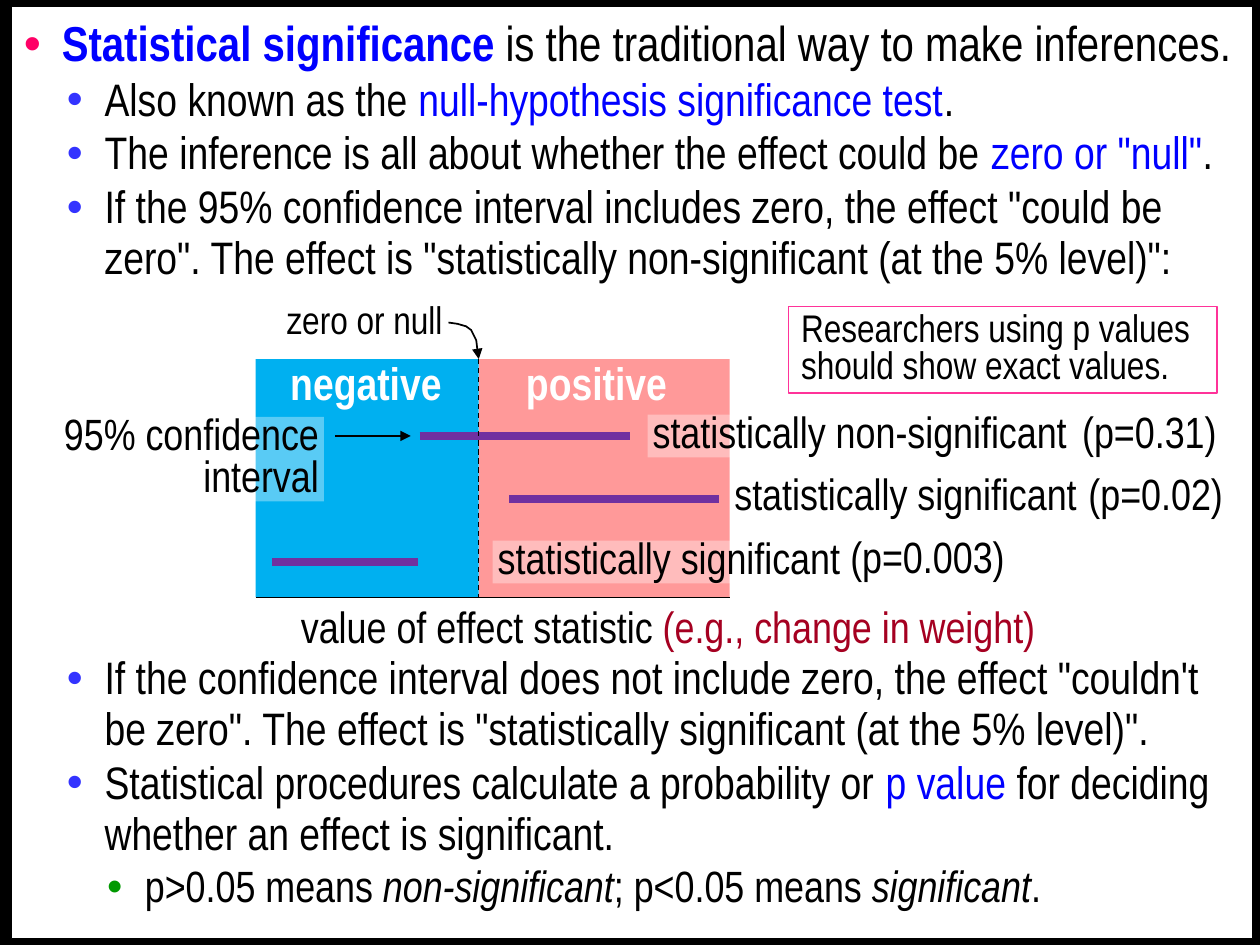
from dataclasses import dataclass

from lxml.etree import SubElement
from pptx import Presentation
from pptx.dml.color import RGBColor
from pptx.enum.dml import MSO_LINE
from pptx.enum.shapes import MSO_CONNECTOR, MSO_SHAPE
from pptx.enum.text import MSO_ANCHOR, MSO_AUTO_SIZE, PP_ALIGN
from pptx.oxml.ns import qn
from pptx.util import Inches, Pt

FONT = "Arial Narrow"
BLACK, WHITE, BLUE, PURPLE = "000000", "FFFFFF", "0000FF", "7030A0"
ZERO, TOP, BOTTOM, LEFT, RIGHT = 3.8, 2.85, 4.74, 2.03, 5.79


@dataclass
class Span:
    text: str
    color: str = BLACK
    bold: bool = False
    italic: bool = False


@dataclass
class Bullet:
    level: int
    spans: list[Span]
    space_before: float = 1.3


@dataclass
class Label:
    box: tuple[float, float, float, float]
    spans: list[Span]
    size: float = 25
    align: PP_ALIGN = PP_ALIGN.LEFT
    anchor: MSO_ANCHOR = MSO_ANCHOR.MIDDLE
    insets: tuple[float, float] = (0.1, 0.05)
    wrap: bool = False
    veil: bool = False
    outline: str = ""
    shadow: bool = False


@dataclass
class Line:
    start: tuple[float, float]
    end: tuple[float, float]
    color: str = BLACK
    width: float = 0.75
    dashed: bool = False
    arrow: bool = False


LEVELS = [(0.3, 28, "FF0066"), (0.64, 26, "3333FF"), (0.96, 25, "009900")]

BULLETS = [
    Bullet(0, [Span("Statistical significance ", BLUE, bold=True),
               Span("is the traditional way to make inferences.")]),
    Bullet(1, [Span("Also known as the "), Span("null-hypothesis significance test", BLUE), Span(".")]),
    Bullet(1, [Span("The inference is all about whether the effect could be "),
               Span('zero or "null"', BLUE), Span(".")]),
    Bullet(1, [Span('If the 95% confidence interval includes zero, the effect "could be zero". '
                    'The effect is "statistically non-significant (at the 5% level)":')]),
    Bullet(1, [Span('If the confidence interval does not include zero, the effect "couldn\'t be zero". '
                    'The effect is "statistically significant (at the 5% level)".')], space_before=210.5),
    Bullet(1, [Span("Statistical procedures calculate a probability or "), Span("p value", BLUE),
               Span(" for deciding whether an effect is significant.")]),
    Bullet(2, [Span("p>0.05 means "), Span("non-significant", italic=True),
               Span("; p<0.05 means "), Span("significant", italic=True), Span(".")]),
]

HEADING = dict(size=26, align=PP_ALIGN.CENTER, anchor=MSO_ANCHOR.TOP, insets=(0.02, 0), shadow=True)
VEILED = dict(insets=(0.04, 0), veil=True)

LABELS = [
    Label((4.15, 2.9, 1.17, 0.35), [Span("positive", WHITE, bold=True)], **HEADING),
    Label((2.28, 2.9, 1.25, 0.35), [Span("negative", WHITE, bold=True)], **HEADING),
    Label((0.35, 3.31, 2.22, 0.67), [Span("95% confidence interval")],
          align=PP_ALIGN.RIGHT, wrap=True, **VEILED),
    Label((5.14, 3.29, 3.4, 0.34), [Span("statistically non-significant")], **VEILED),
    Label((5.73, 3.73, 2.95, 0.44), [Span("statistically significant")]),
    Label((3.91, 4.29, 2.82, 0.34), [Span("statistically significant")], **VEILED),
    Label((8.49, 3.24, 1.28, 0.44), [Span("(p=0.31)")]),
    Label((8.54, 3.73, 1.28, 0.44), [Span("(p=0.02)")]),
    Label((6.65, 4.23, 1.44, 0.44), [Span("(p=0.003)")]),
    Label((2.29, 4.79, 6.1, 0.44), [Span("value of effect statistic"),
                                    Span(" (e.g., change in weight)", "A50021")]),
    Label((2.16, 2.37, 1.45, 0.4), [Span("zero or null")], size=22, align=PP_ALIGN.RIGHT),
    Label((6.26, 2.43, 3.4, 0.69), [Span("Researchers using p values should show exact values.")],
          size=22, wrap=True, outline="FF3399"),
]

LINES = [
    Line((3.33, 3.46), (5, 3.46), PURPLE, 4.5),
    Line((4.04, 3.96), (5.71, 3.96), PURPLE, 4.5),
    Line((2.16, 4.46), (3.32, 4.46), PURPLE, 4.5),
    Line((2.66, 3.46), (3.26, 3.46), width=1, arrow=True),
    Line((LEFT, BOTTOM), (RIGHT, BOTTOM)),
    Line((ZERO, TOP), (ZERO, BOTTOM), dashed=True),
]

POINTER = [(ZERO, TOP), (3.79, 2.78), (3.78, 2.7), (3.74, 2.62), (3.7, 2.59), (3.63, 2.57), (3.56, 2.56)]


def rgb(value: str) -> RGBColor:
    return RGBColor.from_string(value)


def add_spans(paragraph, spans: list[Span], size: float) -> None:
    for span in spans:
        run = paragraph.add_run()
        run.text = span.text
        run.font.name = FONT
        run.font.size = Pt(size)
        run.font.bold = span.bold
        run.font.italic = span.italic
        run.font.color.rgb = rgb(span.color)


def add_text_shadow(run) -> None:
    properties = run.font._element
    effects = SubElement(properties, qn("a:effectLst"))
    properties.find(qn("a:solidFill")).addnext(effects)
    shadow = SubElement(effects, qn("a:outerShdw"), dist="35921", dir="2700000")
    SubElement(shadow, qn("a:srgbClr"), val=BLACK)


def add_arrowhead(shape, end: str) -> None:
    SubElement(shape.line._get_or_add_ln(), qn(end), type="triangle")


def fill_body(body) -> None:
    body.left, body.top, body.width, body.height = map(Inches, (0.09, 0.05, 9.85, 7.4))
    body.fill.solid()
    body.fill.fore_color.rgb = rgb(WHITE)
    body.line.color.rgb = rgb(BLACK)
    body.line.width = Pt(0.75)
    frame = body.text_frame
    frame.auto_size = MSO_AUTO_SIZE.NONE
    frame.word_wrap = True
    frame.vertical_anchor = MSO_ANCHOR.TOP
    frame.margin_left = frame.margin_right = Inches(0.1)
    frame.margin_top, frame.margin_bottom = Inches(0.09), Inches(0.05)
    for index, bullet in enumerate(BULLETS):
        paragraph = frame.add_paragraph() if index else frame.paragraphs[0]
        indent, size, color = LEVELS[bullet.level]
        paragraph.level = bullet.level
        paragraph.line_spacing = 0.94
        paragraph.space_before = Pt(bullet.space_before)
        properties = paragraph._p.get_or_add_pPr()
        properties.set("marL", str(Inches(indent)))
        properties.set("indent", str(Inches(-0.3)))
        SubElement(SubElement(properties, qn("a:buClr")), qn("a:srgbClr"), val=color)
        SubElement(properties, qn("a:buFont"), typeface="Arial")
        SubElement(properties, qn("a:buChar"), char="•")
        add_spans(paragraph, bullet.spans, size)


def add_panel(slide, left: float, right: float, color: str) -> None:
    shape = slide.shapes.add_shape(MSO_SHAPE.RECTANGLE, Inches(left), Inches(TOP),
                                   Inches(right - left), Inches(BOTTOM - TOP))
    shape.shadow.inherit = False
    shape.fill.solid()
    shape.fill.fore_color.rgb = rgb(color)
    shape.line.fill.background()


def add_label(slide, label: Label) -> None:
    shape = slide.shapes.add_textbox(*map(Inches, label.box))
    if label.veil:
        shape.fill.solid()
        shape.fill.fore_color.rgb = rgb(WHITE)
        color = shape._element.spPr.find(".//" + qn("a:srgbClr"))
        SubElement(color, qn("a:alpha"), val="35000")
    if label.outline:
        shape.line.color.rgb = rgb(label.outline)
        shape.line.width = Pt(0.75)
    frame = shape.text_frame
    frame.word_wrap = label.wrap
    frame.auto_size = MSO_AUTO_SIZE.SHAPE_TO_FIT_TEXT
    frame.vertical_anchor = label.anchor
    frame.margin_left = frame.margin_right = Inches(label.insets[0])
    frame.margin_top = frame.margin_bottom = Inches(label.insets[1])
    paragraph = frame.paragraphs[0]
    paragraph.alignment = label.align
    paragraph.line_spacing = 0.8
    add_spans(paragraph, label.spans, label.size)
    if label.shadow:
        add_text_shadow(paragraph.runs[0])


def add_line(slide, line: Line) -> None:
    connector = slide.shapes.add_connector(MSO_CONNECTOR.STRAIGHT, *map(Inches, line.start + line.end))
    connector.line.color.rgb = rgb(line.color)
    connector.line.width = Pt(line.width)
    if line.dashed:
        connector.line.dash_style = MSO_LINE.DASH
    if line.arrow:
        add_arrowhead(connector, "a:tailEnd")
    SubElement(connector._element.spPr, qn("a:effectLst"))


def add_pointer(slide) -> None:
    points = [(Inches(x), Inches(y)) for x, y in POINTER]
    builder = slide.shapes.build_freeform(*points[0])
    builder.add_line_segments(points[1:], close=False)
    pointer = builder.convert_to_shape()
    pointer.shadow.inherit = False
    pointer.fill.background()
    pointer.line.color.rgb = rgb(BLACK)
    pointer.line.width = Pt(1)
    add_arrowhead(pointer, "a:headEnd")


def main() -> None:
    presentation = Presentation()
    presentation.slide_width, presentation.slide_height = Inches(10), Inches(7.5)
    slide = presentation.slides.add_slide(presentation.slide_layouts[1])
    slide.background.fill.solid()
    slide.background.fill.fore_color.rgb = rgb(BLACK)
    title = slide.shapes.title._element
    title.getparent().remove(title)
    fill_body(slide.placeholders[1])
    add_panel(slide, ZERO, RIGHT, "FF9999")
    add_panel(slide, LEFT, ZERO, "00B0F0")
    for line in LINES:
        add_line(slide, line)
    for label in LABELS:
        add_label(slide, label)
    add_pointer(slide)
    presentation.save("out.pptx")


if __name__ == "__main__":
    main()
